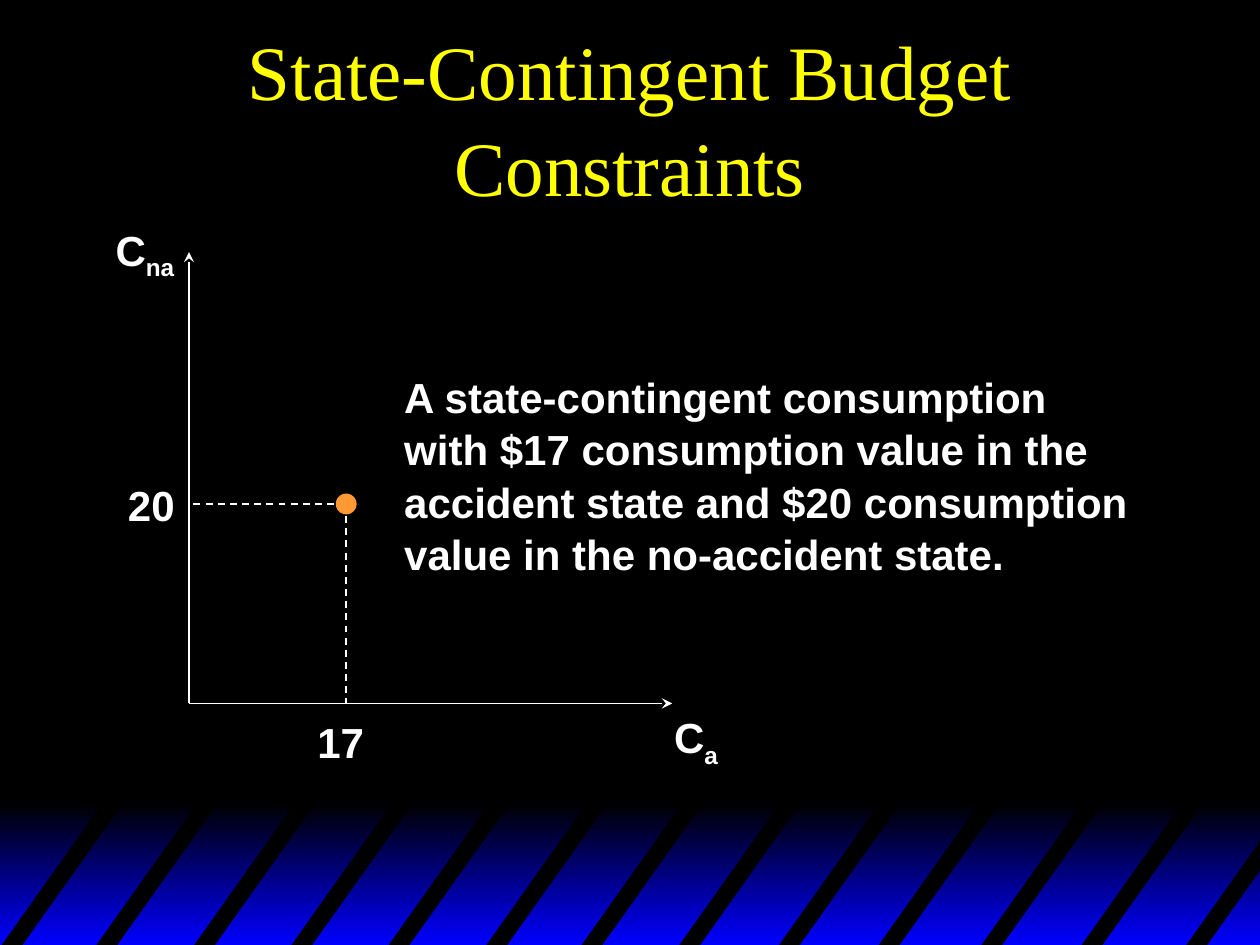
from lxml.etree import SubElement
from pptx import Presentation
from pptx.dml.color import RGBColor
from pptx.enum.dml import MSO_LINE
from pptx.enum.shapes import MSO_CONNECTOR, MSO_SHAPE
from pptx.enum.text import MSO_ANCHOR, MSO_AUTO_SIZE, PP_ALIGN
from pptx.oxml.ns import qn
from pptx.util import Cm, Pt

HUES = {"back": "000000", "band": "0000FF", "title": "FFFF00",
        "ink": "FFFFFF", "dot": "FF9933"}
HEAD = {"name": "Times New Roman", "size": Pt(44), "bold": False}
BODY = {"name": "Arial", "size": Pt(24), "bold": True}

# Chart frame: origin, axis ends and the marked bundle, in cm
LEFT, BASE = 3.81, 14.18
TOP, RIGHT = 5.08, 13.55
DOT_X, DOT_Y, DOT = 6.98, 10.16, 0.42

# Band at the foot of the slide
EDGE, FOOT = 25.45, 19.1
STARTS = [0, 1.91, 3.88, 5.84, 7.8, 9.77, 11.69, 13.66, 15.67, 17.68,
          19.75, 21.77, 23.88]
LEAN, RISE, THICK = 2.13, 3.0, 0.42


def hue(key):
    return RGBColor.from_string(HUES[key])


class Page:
    def __init__(self, slide):
        self.slide = slide
        self.shapes = slide.shapes
        back = slide.background.fill
        back.solid()
        back.fore_color.rgb = hue("back")

    def style(self, font, form, key):
        for name, value in form.items():
            setattr(font, name, value)
        font.color.rgb = hue(key)

    def plain(self, shape, key):
        """Flat fill with neither outline nor shadow."""
        shape.shadow.inherit = False
        shape.line.fill.background()
        shape.fill.solid()
        shape.fill.fore_color.rgb = hue(key)
        return shape

    def title(self, text, x, y, w, h):
        box = self.shapes.title
        box.left, box.top, box.width, box.height = map(Cm, (x, y, w, h))
        frame = box.text_frame
        frame.text = text
        frame.word_wrap = True
        frame.vertical_anchor = MSO_ANCHOR.MIDDLE
        par = frame.paragraphs[0]
        par.alignment = PP_ALIGN.CENTER
        par.line_spacing = 1.04
        self.style(par.runs[0].font, HEAD, "title")

    def text(self, lines, x, y, w, h, sub="", wrap=False):
        """Lines split by breaks, then an optional subscript."""
        frame = self.shapes.add_textbox(*map(Cm, (x, y, w, h))).text_frame
        frame.word_wrap = wrap
        frame.auto_size = MSO_AUTO_SIZE.SHAPE_TO_FIT_TEXT
        par = frame.paragraphs[0]
        par.line_spacing = 1.04
        for i, line in enumerate(lines):
            if i:
                par.add_line_break()
            self.run(par, line)
        if sub:
            low = self.run(par, sub)
            low.font._element.set("baseline", "-25000")

    def run(self, par, text):
        run = par.add_run()
        run.text = text
        self.style(run.font, BODY, "ink")
        return run

    def line(self, x1, y1, x2, y2, arrow=False):
        """A solid axis with an arrowhead, or a dashed guide."""
        link = self.shapes.add_connector(
            MSO_CONNECTOR.STRAIGHT, *map(Cm, (x1, y1, x2, y2)))
        link.line.width = Pt(1)
        link.line.color.rgb = hue("ink")
        if arrow:
            SubElement(link.line._get_or_add_ln(), qn("a:tailEnd"),
                       type="stealth")
        else:
            link.line.dash_style = MSO_LINE.DASH
        SubElement(link._element.spPr, qn("a:effectLst"))

    def dot(self, x, y, size):
        spot = self.shapes.add_shape(
            MSO_SHAPE.OVAL,
            *map(Cm, (x - size / 2, y - size / 2, size, size)))
        self.plain(spot, "dot")

    def band(self, y, w, h):
        bar = self.shapes.add_shape(
            MSO_SHAPE.RECTANGLE, *map(Cm, (0, y, w, h)))
        fill = self.plain(bar, "band").fill
        fill.gradient()
        fill.gradient_angle = 270
        for stop, key, pos in zip(fill.gradient_stops,
                                  ("back", "band"), (0, 1)):
            stop.color.rgb = hue(key)
            stop.position = pos

    def stripe(self, x):
        """Slanted bar, cut off at the right edge of the band."""
        far = x + THICK
        left, right = (min(LEAN, EDGE - p) for p in (x, far))
        slope = RISE / LEAN
        spots = [(x, FOOT), (x + left, FOOT - left * slope),
                 (far + right, FOOT - right * slope), (far, FOOT)]
        first, *rest = [(Cm(a), Cm(b)) for a, b in spots]
        path = self.shapes.build_freeform(*first)
        path.add_line_segments(rest)
        self.plain(path.convert_to_shape(), "back")


def main():
    deck = Presentation()
    deck.slide_width, deck.slide_height = Cm(25.4), Cm(19.05)
    page = Page(deck.slides.add_slide(deck.slide_layouts[5]))

    page.band(16.2, EDGE, 2.85)
    for x in STARTS:
        page.stripe(x)
    page.title("State-Contingent Budget Constraints", 1.9, 0.64, 21.6, 3.38)

    page.line(LEFT, BASE, LEFT, TOP, arrow=True)
    page.line(LEFT, BASE, RIGHT, BASE, arrow=True)
    page.text(["C"], 2.08, 4.35, 1.78, 1.27, sub="na")
    page.text(["C"], 13.34, 14.18, 1.45, 1.27, sub="a")

    page.line(DOT_X, DOT_Y, DOT_X, BASE)
    page.line(DOT_X, DOT_Y, LEFT, DOT_Y)
    page.dot(DOT_X, DOT_Y, DOT)
    page.text(["20"], 2.33, 9.5, 1.45, 1.27)
    page.text(["17"], 6.15, 14.28, 1.45, 1.27)
    page.text(["A state-contingent consumption",
               "with $17 consumption value in the accident state and "
               "$20 consumption value in the no-accident state."],
              7.9, 7.32, 16.66, 4.32, wrap=True)
    deck.save("out.pptx")


if __name__ == "__main__":
    main()
